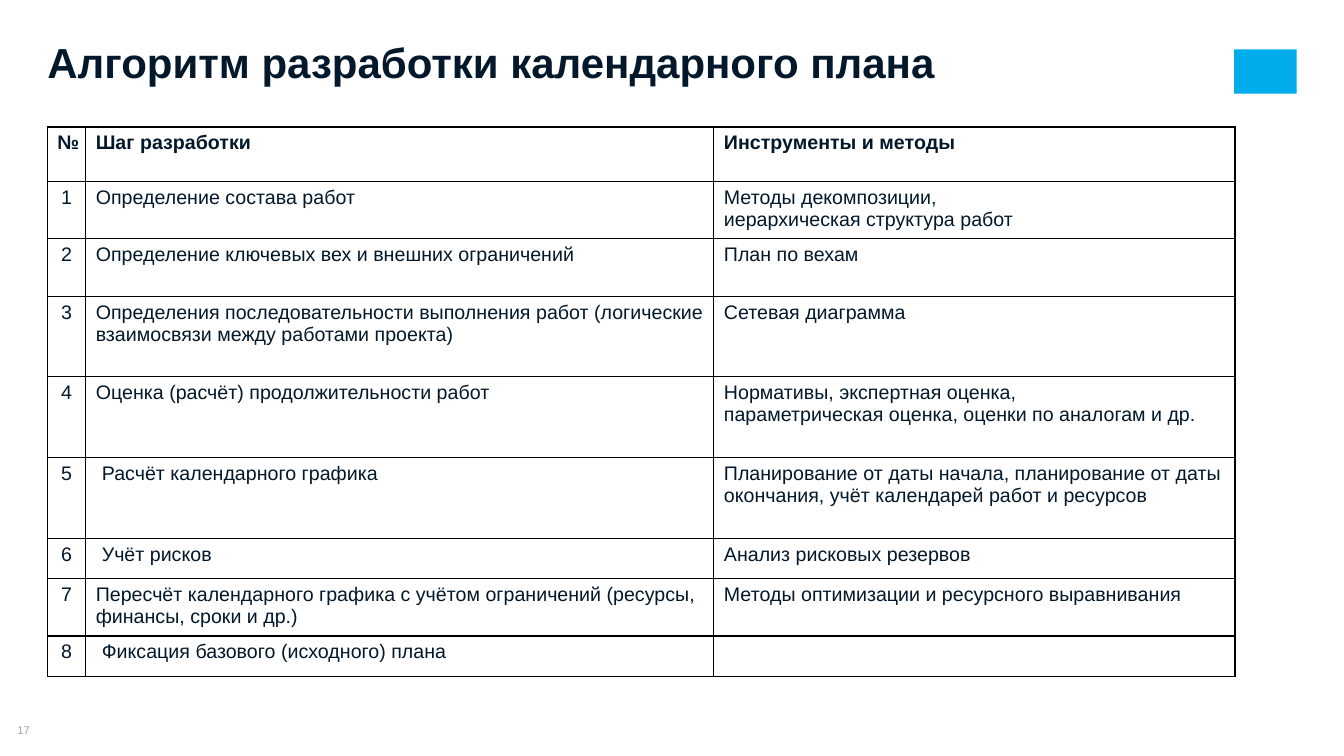
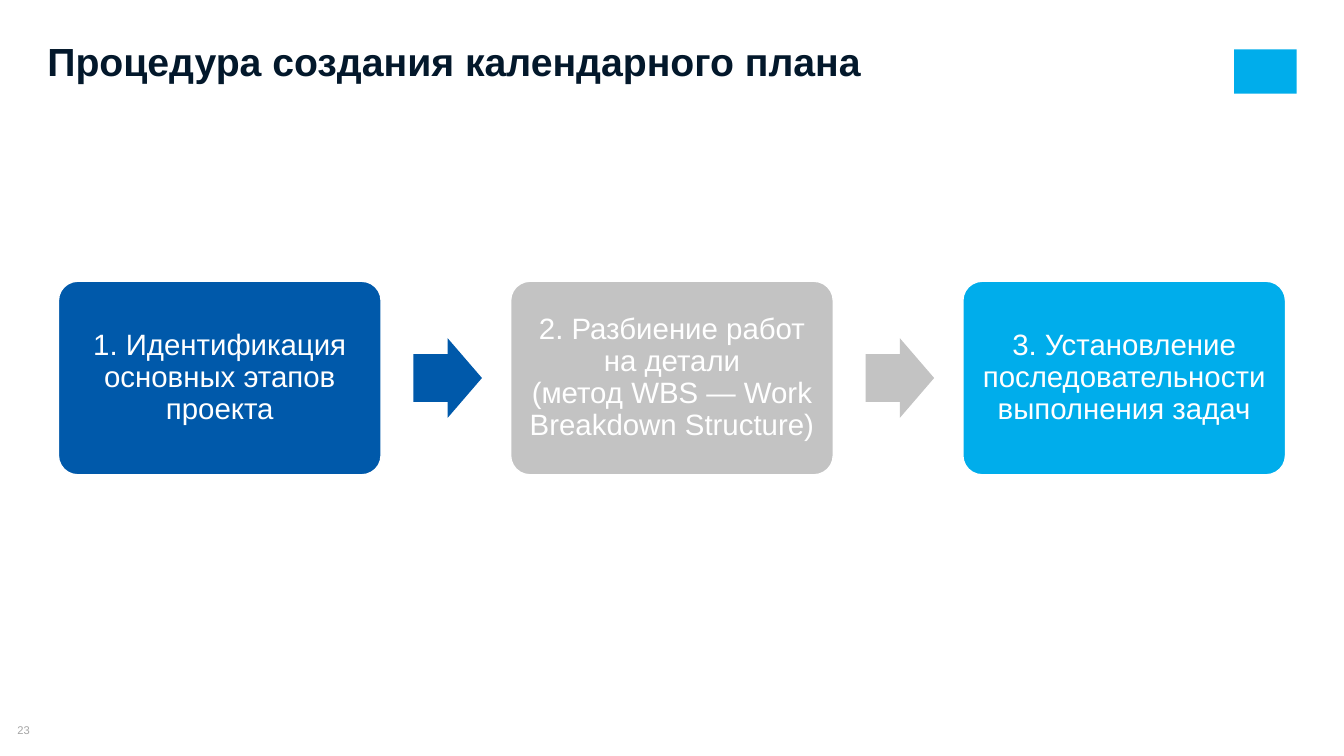
"""Build two slides on calendar planning: a table of steps and a three-stage flow."""
from lxml import etree
from pptx import Presentation
from pptx import util as u
from pptx.dml.color import RGBColor
from pptx.enum import shapes, text
from pptx.oxml.ns import qn

COLORS = {"ink": "03182B", "sky": "00ADEB", "blue": "0059AA", "silver": "C3C3C3",
          "number": "A6A6A6", "white": "FFFFFF", "border": "000000"}
FONT = "Arial"
MARGIN = 0.47
SLIDES = [("Алгоритм разработки календарного плана", 30, "17"),
          ("Процедура создания календарного плана", 28, "23")]


def write(para, words, size, color, bold=False, align=text.PP_ALIGN.LEFT):
    para.alignment = align
    for index, line in enumerate(words.split("\n")):
        if index:
            para.add_line_break()
        span = para.add_run()
        span.text = line
        span.font.name, span.font.size, span.font.bold = FONT, u.Pt(size), bold
        span.font.color.rgb = RGBColor.from_string(COLORS[color])


def add_block(page, kind, left, top, width, height, color):
    block = page.shapes.add_shape(kind, *map(u.Inches, (left, top, width, height)))
    block.shadow.inherit = False
    block.fill.solid()
    block.fill.fore_color.rgb = RGBColor.from_string(COLORS[color])
    block.line.fill.background()
    return block


deck = Presentation()
deck.slide_width, deck.slide_height = u.Inches(13.33), u.Inches(7.5)

pages = []
for heading, size, number in SLIDES:
    page = deck.slides.add_slide(deck.slide_layouts[5])
    pages.append(page)
    title = page.shapes.title
    title.left, title.top = u.Inches(MARGIN), u.Inches(0.46)
    title.width, title.height = u.Inches(10.51), u.Inches(0.4)
    footer = page.shapes.add_textbox(0, u.Inches(7.18), u.Inches(MARGIN), u.Inches(0.13))
    for box, anchor in ((title, text.MSO_ANCHOR.TOP), (footer, text.MSO_ANCHOR.MIDDLE)):
        frame = box.text_frame
        frame.margin_left = frame.margin_right = frame.margin_top = frame.margin_bottom = 0
        frame.word_wrap, frame.vertical_anchor = True, anchor
        frame.auto_size = text.MSO_AUTO_SIZE.NONE
    write(title.text_frame.paragraphs[0], heading, size, "ink", True)
    title.text_frame.paragraphs[0].line_spacing = 0.8
    write(footer.text_frame.paragraphs[0], number, 8, "number", align=text.PP_ALIGN.CENTER)
    add_block(page, shapes.MSO_SHAPE.RECTANGLE, 12.24, 0.49, 0.62, 0.44, "sky")

table_page, flow_page = pages

COLUMNS = [0.38, 6.23, 5.17]
INDENTED = {5, 6, 8}
STEPS = [
    (0.54, "Шаг разработки", ["Инструменты и методы"]),
    (0.57, "Определение состава работ",
     ["Методы декомпозиции,", "иерархическая структура работ"]),
    (0.57, "Определение ключевых вех и внешних ограничений", ["План по вехам"]),
    (0.8, "Определения последовательности выполнения работ "
          "(логические взаимосвязи между работами проекта)", ["Сетевая диаграмма"]),
    (0.8, "Оценка (расчёт) продолжительности работ",
     ["Нормативы, экспертная оценка,", "параметрическая оценка, оценки по аналогам и др."]),
    (0.8, "Расчёт календарного графика",
     ["Планирование от даты начала, планирование от даты окончания, "
      "учёт календарей работ и ресурсов"]),
    (0.4, "Учёт рисков", ["Анализ рисковых резервов"]),
    (0.57, "Пересчёт календарного графика с учётом ограничений (ресурсы, финансы, сроки и др.)",
     ["Методы оптимизации и ресурсного выравнивания"]),
    (0.4, "Фиксация базового (исходного) плана", []),
]

table = table_page.shapes.add_table(
    len(STEPS), len(COLUMNS), u.Inches(MARGIN), u.Inches(1.26),
    u.Inches(sum(COLUMNS)), u.Inches(sum(step[0] for step in STEPS))).table
table.first_row = table.horz_banding = False
for column, width in zip(table.columns, COLUMNS):
    column.width = u.Inches(width)

for row, (height, action, methods) in enumerate(STEPS):
    table.rows[row].height = u.Inches(height)
    for column, lines in enumerate(([str(row) if row else "№"], [action], methods)):
        cell = table.cell(row, column)
        frame = cell.text_frame
        centred = row > 0 and column == 0
        for index, line in enumerate(lines):
            para = frame.add_paragraph() if index else frame.paragraphs[0]
            write(para, line, 14, "ink", row == 0,
                  text.PP_ALIGN.CENTER if centred else text.PP_ALIGN.LEFT)
            if column == 1 and row in INDENTED:
                para._p.get_or_add_pPr().set("marL", str(u.Inches(0.06)))
        properties = cell._tc.get_or_add_tcPr()
        for side in ("lnL", "lnR", "lnT", "lnB"):
            edge = etree.SubElement(properties, qn("a:" + side), w=str(u.Pt(1)))
            fill = etree.SubElement(edge, qn("a:solidFill"))
            etree.SubElement(fill, qn("a:srgbClr"), val=COLORS["border"])
        cell.fill.background()

STAGES = [("1. Идентификация основных этапов проекта", "blue"),
          ("2. Разбиение работ на детали\n(метод WBS — Work Breakdown Structure)", "silver"),
          ("3. Установление последовательности выполнения задач", "sky")]
STAGE_LEFT, STAGE_TOP, STAGE_WIDTH, STAGE_HEIGHT = 0.58, 2.79, 3.2, 1.92
STEP = 4.485
ARROW_WIDTH, ARROW_HEIGHT, ARROW_GAP = 0.68, 0.79, 0.32

for index, (words, color) in enumerate(STAGES):
    left = STAGE_LEFT + index * STEP
    box = add_block(flow_page, shapes.MSO_SHAPE.ROUNDED_RECTANGLE,
                    left, STAGE_TOP, STAGE_WIDTH, STAGE_HEIGHT, color)
    box.adjustments[0] = 0.1
    box.line.color.rgb = RGBColor.from_string(COLORS["white"])
    box.line.width = u.Pt(1)
    frame = box.text_frame
    frame.word_wrap, frame.vertical_anchor = True, text.MSO_ANCHOR.MIDDLE
    frame.margin_left = frame.margin_right = u.Inches(0.09)
    frame.margin_top = frame.margin_bottom = u.Inches(0.09)
    write(frame.paragraphs[0], words, 21, "white", align=text.PP_ALIGN.CENTER)
    frame.paragraphs[0].line_spacing = 0.9
    if index < len(STAGES) - 1:
        arrow = add_block(flow_page, shapes.MSO_SHAPE.RIGHT_ARROW,
                          left + STAGE_WIDTH + ARROW_GAP,
                          STAGE_TOP + (STAGE_HEIGHT - ARROW_HEIGHT) / 2,
                          ARROW_WIDTH, ARROW_HEIGHT, color)
        arrow.adjustments[0], arrow.adjustments[1] = 0.6, 0.5

deck.save("out.pptx")
